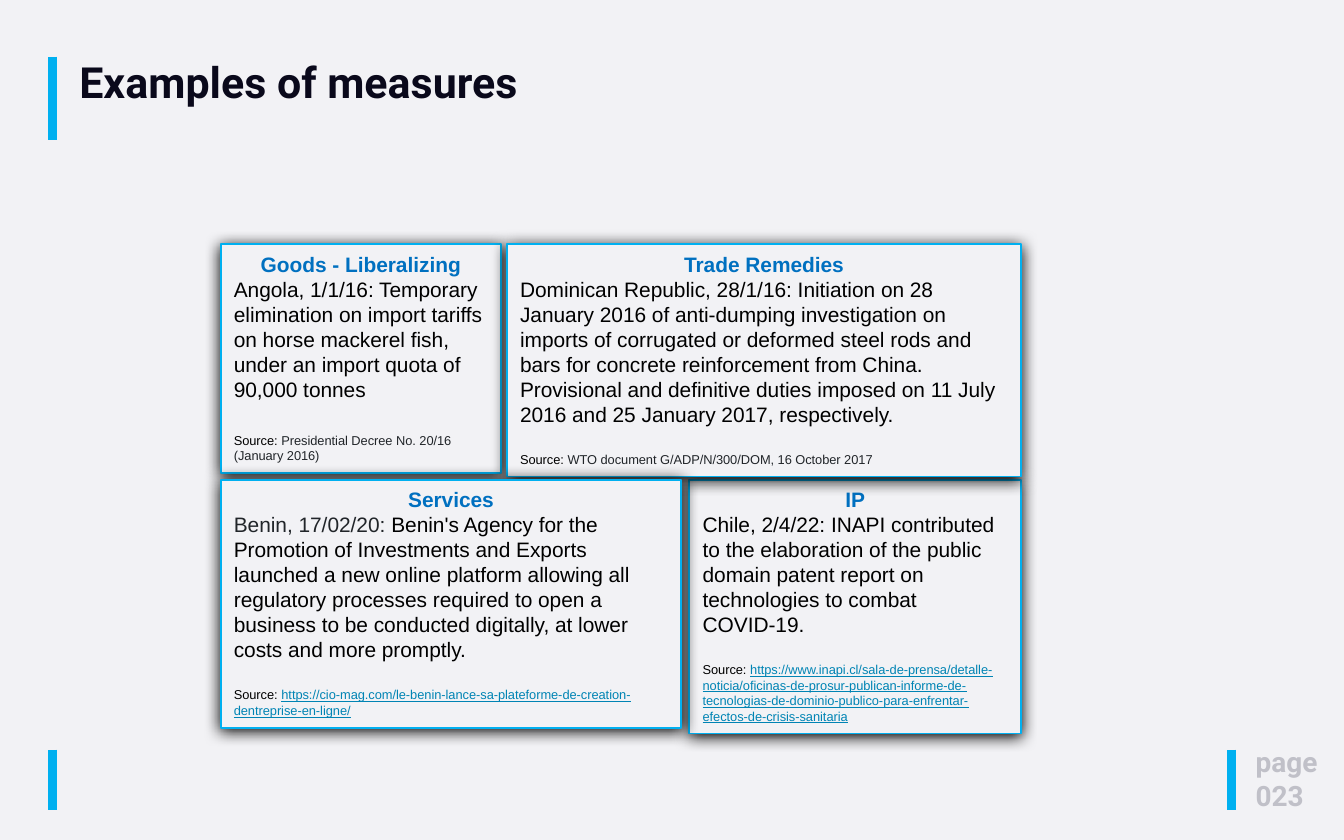
import pptx
import pptx.util
import pptx.dml.color
import pptx.enum.shapes
import pptx.enum.text
import pptx.oxml
import pptx.oxml.ns
from lxml import etree

Cm, Pt = pptx.util.Cm, pptx.util.Pt
ALIGN = pptx.enum.text.PP_ALIGN
FIT = pptx.enum.text.MSO_AUTO_SIZE
TOP = pptx.enum.text.MSO_ANCHOR.TOP

COLORS = {
    "background": "F2F2F5", "accent": "00B0F0", "title": "0A091B",
    "heading": "0070C0", "text": "000000", "muted": "212529",
    "link": "0084B4", "page": "C0C0C8", "shadow": "000000",
}
TITLE = "Examples of measures"
PAGE = ["page", "023"]
BARS = [(0.99, 14.17, 15.32), (23.27, 14.17, 15.32), (0.99, 1.07, 2.64)]
LEFT, RIGHT, ROWS = 4.17, 19.3, (4.62, 9.07)
BODY, SMALL = 11.2, 6.9

CARDS = [
    {"heading": "Goods - Liberalizing", "row": 0, "left": LEFT, "right": 9.47, "height": 4.32,
     "body": [[("Angola, 1/1/16: Temporary elimination on import tariffs on horse mackerel fish, "
                "under an import quota of 90,000 tonnes", "text")]],
     "gap": 16.4, "source": ("Presidential Decree No. 20/16 (January 2016)", "muted")},
    {"heading": "IP", "row": 1, "left": 13.03, "right": RIGHT, "height": 4.8,
     "body": [[("Chile, 2/4/22: INAPI contributed to the elaboration of the public domain patent "
                "report on technologies to combat COVID-19.", "text")]],
     "gap": 13.4, "source": (
         "https://www.inapi.cl/sala-de-prensa/detalle-noticia/oficinas-de-prosur-publican-informe-de-"
         "tecnologias-de-dominio-publico-para-enfrentar-efectos-de-crisis-sanitaria", "link")},
    {"heading": "Trade Remedies", "row": 0, "left": 9.58, "right": RIGHT, "height": 4.39,
     "body": [[("Dominican Republic, 28/1/16: Initiation on 28 January 2016 of anti-dumping "
                "investigation on imports of corrugated or deformed steel rods and bars for "
                "concrete reinforcement from China.", "text")],
              [("Provisional and definitive duties imposed on 11 July 2016 and 25 January 2017, "
                "respectively.", "text")]],
     "gap": 13.4, "source": ("WTO document G/ADP/N/300/DOM, 16 October 2017", "muted")},
    {"heading": "Services", "row": 1, "left": LEFT, "right": 12.88, "height": 4.7,
     "body": [[("Benin, 17/02/20: ", "muted"),
               ("Benin's Agency for the Promotion of Investments and Exports launched a new online "
                "platform allowing all regulatory processes required to open a business to be "
                "conducted digitally, at lower costs and more promptly.", "text")]],
     "gap": 13.4, "source": (
         "https://cio-mag.com/le-benin-lance-sa-plateforme-de-creation-dentreprise-en-ligne/", "link")},
]


def rgb(name):
    return pptx.dml.color.RGBColor.from_string(COLORS[name])


def add_run(p, text, size, color, bold=False, font="Arial"):
    r = p.add_run()
    r.text = text
    r.font.name, r.font.size, r.font.bold = font, Pt(size), bold
    r.font.color.rgb = rgb(color)
    if color == "link":
        r.font.underline = True


def set_frame(tf, fit, side=0.25, edge=0.13):
    tf.word_wrap, tf.auto_size, tf.vertical_anchor = True, fit, TOP
    tf.margin_left = tf.margin_right = Cm(side)
    tf.margin_top = tf.margin_bottom = Cm(edge)


def add_shadow(sp):
    effects = sp._element.spPr.find(pptx.oxml.ns.qn("a:effectLst"))
    shadow = etree.SubElement(effects, pptx.oxml.ns.qn("a:outerShdw"),
                              blurRad=str(Pt(8.5)), dist=str(Pt(1)), dir="5400000",
                              algn="t", rotWithShape="0")
    etree.SubElement(shadow, pptx.oxml.ns.qn("a:srgbClr"), val=COLORS["shadow"])


def add_bar(s, x, top, bottom):
    line = s.shapes.add_connector(pptx.enum.shapes.MSO_CONNECTOR.STRAIGHT,
                                  Cm(x), Cm(top), Cm(x), Cm(bottom))
    line.line.color.rgb = rgb("accent")
    line.line.width = Pt(5)
    etree.SubElement(line._element.spPr, pptx.oxml.ns.qn("a:effectLst"))


def add_card(s, card):
    sp = s.shapes.add_shape(pptx.enum.shapes.MSO_SHAPE.RECTANGLE,
                            Cm(card["left"]), Cm(ROWS[card["row"]]),
                            Cm(card["right"] - card["left"]), Cm(card["height"]))
    sp.fill.solid()
    sp.fill.fore_color.rgb = rgb("background")
    sp.line.color.rgb = rgb("accent")
    sp.line.width = Pt(1)
    sp.shadow.inherit = False
    add_shadow(sp)
    tf = sp.text_frame
    set_frame(tf, FIT.SHAPE_TO_FIT_TEXT)
    p = tf.paragraphs[0]
    p.alignment = ALIGN.CENTER
    add_run(p, card["heading"], BODY, "heading", True)
    for runs in card["body"]:
        p = tf.add_paragraph()
        p.alignment = ALIGN.LEFT
        for text, color in runs:
            add_run(p, text, BODY, color)
    p = tf.add_paragraph()
    p.alignment = ALIGN.LEFT
    p.space_before = Pt(card["gap"])
    add_run(p, "Source: ", SMALL, "text")
    text, color = card["source"]
    add_run(p, text, SMALL, color)


def main():
    prs = pptx.Presentation()
    prs.slide_width, prs.slide_height = Cm(25.4), Cm(15.88)
    s = prs.slides.add_slide(prs.slide_layouts[5])
    s.background.fill.solid()
    s.background.fill.fore_color.rgb = rgb("background")

    for bar in BARS:
        add_bar(s, *bar)

    title = s.shapes.title
    title.left, title.top, title.width, title.height = Cm(1.37), Cm(1.09), Cm(11.48), Cm(1.02)
    set_frame(title.text_frame, FIT.NONE, 0.13, 0.08)
    p = title.text_frame.paragraphs[0]
    p.alignment = ALIGN.LEFT
    p.line_spacing = 0.9
    add_run(p, TITLE, 23, "title", True, "Roboto")

    for card in CARDS:
        add_card(s, card)

    tf = s.shapes.add_textbox(Cm(23.6), Cm(14), Cm(2.41), Cm(1.42)).text_frame
    set_frame(tf, FIT.SHAPE_TO_FIT_TEXT, 0.13, 0.08)
    for i, text in enumerate(PAGE):
        p = tf.add_paragraph() if i else tf.paragraphs[0]
        add_run(p, text, 15, "page", True, "Roboto")

    prs.save("out.pptx")


if __name__ == "__main__":
    main()
